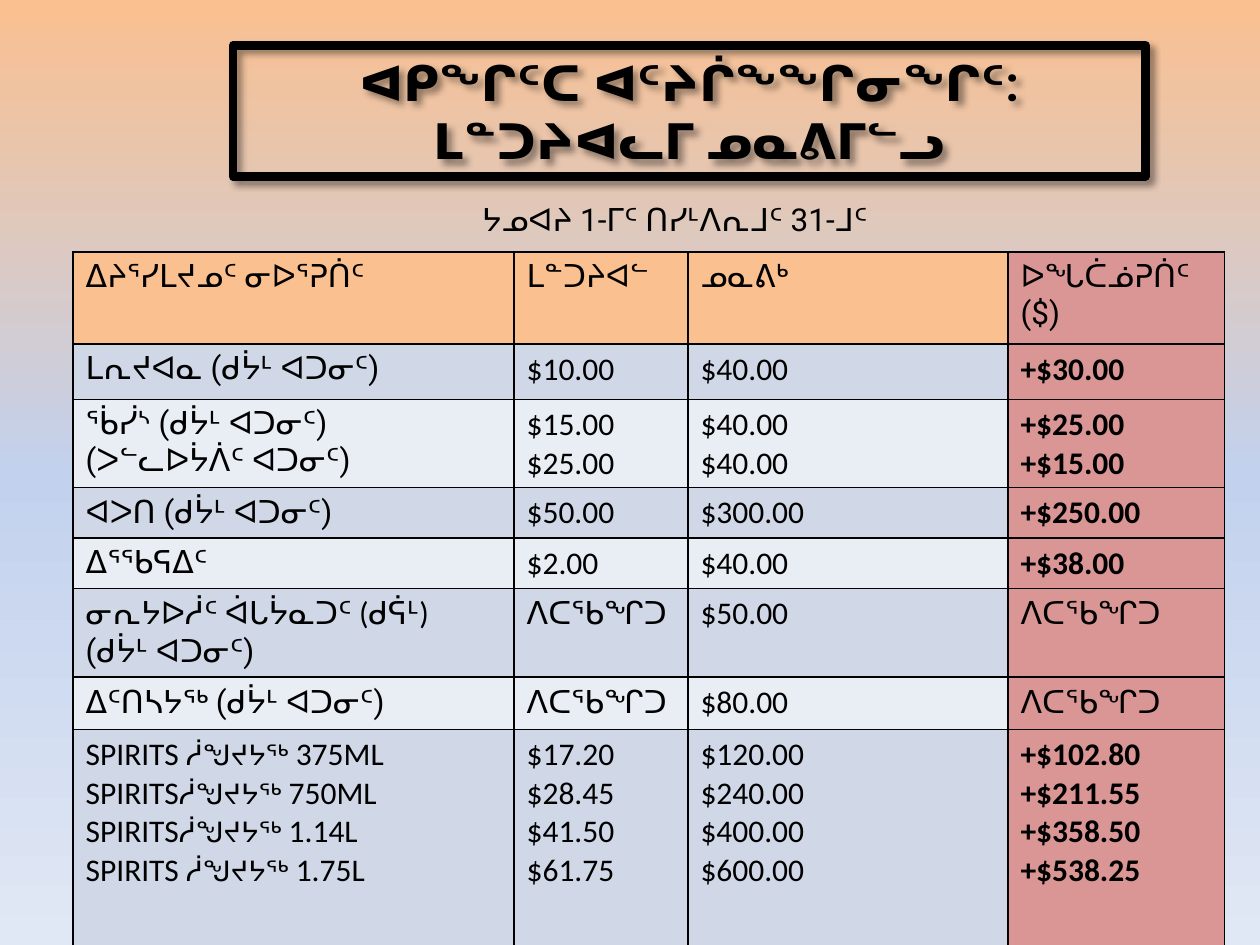
import pptx
import pptx.dml.color
import pptx.enum.text
import pptx.oxml
import pptx.oxml.ns
import pptx.util

Inches = pptx.util.Inches
Pt = pptx.util.Pt
RGBColor = pptx.dml.color.RGBColor
NAMESPACE = pptx.oxml.ns.nsdecls("a")

BLACK = RGBColor(0x00, 0x00, 0x00)
ORANGE = RGBColor(0xFA, 0xC0, 0x90)
ROSE = RGBColor(0xD9, 0x96, 0x94)
BAND_DARK = RGBColor(0xD0, 0xD8, 0xE8)
BAND_LIGHT = RGBColor(0xE9, 0xED, 0xF4)
BACKGROUND_STOPS = [
    (0, ORANGE),
    (50, RGBColor(0xC2, 0xD1, 0xED)),
    (100, RGBColor(0xE1, 0xE8, 0xF5)),
]

SYLLABIC_FONT = "Roboto"
LATIN_FONT = "Calibri"

TITLE_LINES = ["ᐊᑭᖏᑦᑕ ᐊᑦᔨᒌᖕᖏᓂᖏᑦ:", "ᒪᓐᑐᔨᐊᓚᒥ ᓄᓇᕕᒥᓪᓗ"]
PERIOD = "ᔭᓄᐊᔨ 1-ᒥᑦ ᑎᓯᒻᐱᕆᒧᑦ 31-ᒧᑦ"

UNAVAILABLE = "ᐱᑕᖃᖏᑐ"
PER_GRAM = "(ᑯᔮᒻ ᐊᑐᓂᑦ)"
HEADERS = ["ᐃᔨᕐᓯᒪᔪᓄᑦ ᓂᐅᕐᕈᑏᑦ", "ᒪᓐᑐᔨᐊᓪ", "ᓄᓇᕕᒃ", "ᐅᖓᑖᓅᕈᑏᑦ ($)"]
COLUMN_WIDTHS = [3.5, 1.38, 2.54, 1.72]
ROW_HEIGHTS = [0.73, 0.44, 0.67, 0.38, 0.4, 0.42, 0.42, 1.97]


def spirit(kind, volume):
    return [(kind, LATIN_FONT, 18), ("ᓲᖑᔪᔭᖅ ", SYLLABIC_FONT, 16),
            (volume, LATIN_FONT, 18)]


# Each cell is a list of lines; a line is text or a list of (text, font, size).
PRICE_ROWS = [
    [[f"ᒪᕆᔪᐊᓇ {PER_GRAM}"], ["$10.00"], ["$40.00"], ["+$30.00"]],
    [[f"ᖄᓰᔅ {PER_GRAM}", "(ᐳᓪᓚᐅᔮᐲᑦ ᐊᑐᓂᑦ)"],
     ["$15.00", "$25.00"], ["$40.00", "$40.00"], ["+$25.00", "+$15.00"]],
    [[f"ᐊᐳᑎ {PER_GRAM}"], ["$50.00"], ["$300.00"], ["+$250.00"]],
    [["ᐃᕐᖃᕋᐃᑦ"], ["$2.00"], ["$40.00"], ["+$38.00"]],
    [[[("ᓂᕆᔭᐅᓲᑦ ᐋᒐᔮᓇᑐᑦ (ᑯᕌᒻ)", LATIN_FONT, 18)], PER_GRAM],
     [UNAVAILABLE], ["$50.00"], [UNAVAILABLE]],
    [[[("ᐃᑦᑎᓴᔭᖅ ", LATIN_FONT, 18), (PER_GRAM, SYLLABIC_FONT, 18)]],
     [UNAVAILABLE], ["$80.00"], [UNAVAILABLE]],
    [[spirit("SPIRITS ", "375ML"), spirit("SPIRITS", "750ML"),
      spirit("SPIRITS", "1.14L"), spirit("SPIRITS ", "1.75L")],
     ["$17.20", "$28.45", "$41.50", "$61.75"],
     ["$120.00", "$240.00", "$400.00", "$600.00"],
     ["+$102.80", "+$211.55", "+$358.50", "+$538.25"]],
]


def write_lines(frame, lines, font, size=18, bold=False, align=None):
    for index, line in enumerate(lines):
        para = frame.paragraphs[0] if index == 0 else frame.add_paragraph()
        para.alignment = align
        spans = [(line, font, size)] if isinstance(line, str) else line
        for text, span_font, span_size in spans:
            span = para.add_run()
            span.text = text
            span.font.name = span_font
            span.font.size = Pt(span_size)
            span.font.bold = bold
            span.font.color.rgb = BLACK


def paint_background(page):
    fill = page.background.fill
    fill.gradient()
    fill.gradient_angle = 270
    stop_list = page.element.find(".//" + pptx.oxml.ns.qn("a:gsLst"))
    for stop in list(stop_list):
        stop_list.remove(stop)
    for percent, color in BACKGROUND_STOPS:
        stop_list.append(pptx.oxml.parse_xml(
            f'<a:gs {NAMESPACE} pos="{percent * 1000}">'
            f'<a:srgbClr val="{color}"/></a:gs>'))


def place(shape, left, top, width, height):
    shape.left, shape.top = Inches(left), Inches(top)
    shape.width, shape.height = Inches(width), Inches(height)


def add_title(page, *box):
    title = page.shapes.title
    place(title, *box)
    title.line.color.rgb = BLACK
    title.line.width = Pt(5)
    title.element.spPr.append(pptx.oxml.parse_xml(
        f'<a:effectLst {NAMESPACE}><a:outerShdw blurRad="{Pt(4)}" '
        f'dist="{Pt(3)}" dir="2700000" algn="tl" rotWithShape="0">'
        f'<a:srgbClr val="{BLACK}"><a:alpha val="40000"/></a:srgbClr>'
        '</a:outerShdw></a:effectLst>'))
    frame = title.text_frame
    frame.word_wrap = True
    frame.auto_size = pptx.enum.text.MSO_AUTO_SIZE.SHAPE_TO_FIT_TEXT
    write_lines(frame, TITLE_LINES, SYLLABIC_FONT, 28, True,
                pptx.enum.text.PP_ALIGN.CENTER)


def add_period(page, *box):
    caption = page.shapes.add_textbox(*map(Inches, box))
    frame = caption.text_frame
    frame.word_wrap = True
    frame.auto_size = pptx.enum.text.MSO_AUTO_SIZE.SHAPE_TO_FIT_TEXT
    write_lines(frame, [PERIOD], SYLLABIC_FONT,
                align=pptx.enum.text.PP_ALIGN.CENTER)


def style_cell(cell, color):
    """Give the cell a thin black border and a solid fill."""
    properties = cell._tc.get_or_add_tcPr()
    for side in "LRTB":
        properties.append(pptx.oxml.parse_xml(
            f'<a:ln{side} {NAMESPACE} w="{Pt(1)}"><a:solidFill>'
            f'<a:srgbClr val="{BLACK}"/></a:solidFill></a:ln{side}>'))
    cell.fill.solid()
    cell.fill.fore_color.rgb = color


def add_price_table(page, left, top):
    rows = [[[header] for header in HEADERS]] + PRICE_ROWS
    table = page.shapes.add_table(
        len(rows), len(HEADERS), Inches(left), Inches(top),
        Inches(sum(COLUMN_WIDTHS)), Inches(sum(ROW_HEIGHTS))).table
    table.first_row = table.horz_banding = False
    for column, width in zip(table.columns, COLUMN_WIDTHS):
        column.width = Inches(width)
    last_column = len(HEADERS) - 1
    for row_index, row in enumerate(rows):
        table.rows[row_index].height = Inches(ROW_HEIGHTS[row_index])
        band = BAND_DARK if row_index % 2 else BAND_LIGHT
        row_color = band if row_index else ORANGE
        for column_index, lines in enumerate(row):
            cell = table.cell(row_index, column_index)
            style_cell(cell, ROSE if column_index == last_column else row_color)
            is_label = row_index == 0 or column_index == 0
            is_increase = isinstance(lines[0], str) and lines[0].startswith("+")
            write_lines(cell.text_frame, lines,
                        SYLLABIC_FONT if is_label else LATIN_FONT,
                        bold=is_increase)


def main():
    deck = pptx.Presentation()
    deck.slide_width, deck.slide_height = Inches(10), Inches(7.5)
    page = deck.slides.add_slide(deck.slide_layouts.get_by_name("Title Only"))
    paint_background(page)
    add_title(page, 1.85, 0.36, 7.24, 1.04)
    add_price_table(page, 0.58, 2)
    add_period(page, 1.85, 1.54, 7.01, 0.4)
    deck.save("out.pptx")


if __name__ == "__main__":
    main()
